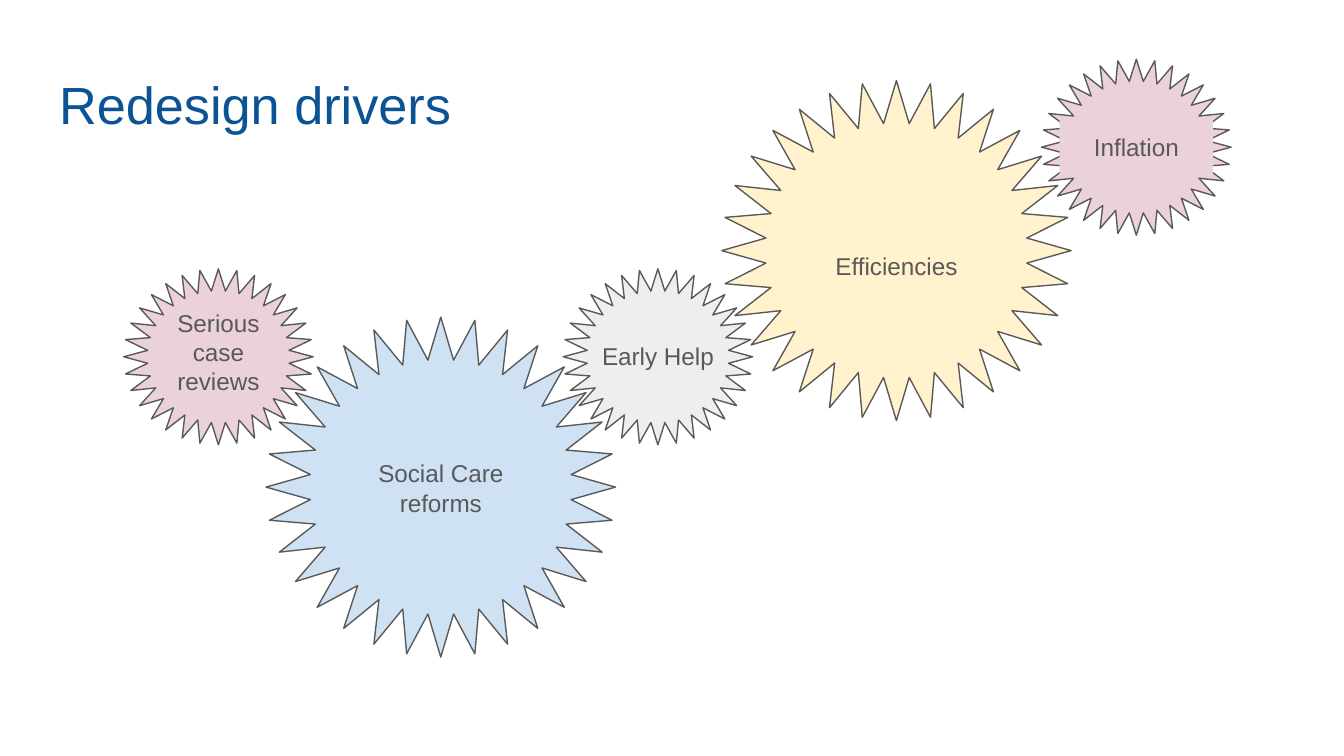
from dataclasses import dataclass

from pptx import Presentation
from pptx.dml.color import RGBColor
from pptx.enum import shapes, text
from pptx.util import Inches, Pt


@dataclass(frozen=True)
class Theme:
    font: str = "Arial"
    title_size: int = 28
    label_size: int = 13
    title: str = "0B5394"
    ink: str = "595959"
    blue: str = "CFE2F3"
    pink: str = "EAD1DC"
    cream: str = "FFF2CC"
    grey: str = "EEEEEE"


THEME = Theme()
LARGE, SMALL = (2.6, 2.53), (1.41, 1.31)
LABEL_WIDTH = 1.14

# wording, gear left, gear top, gear size, fill, label top, label height, label filled
CENTRAL_DRIVER = ("Social Care reforms", 1.98, 2.36, LARGE, THEME.blue, 3.31, 0.64, False)
LINKED_DRIVERS = [
    ("Inflation", 7.75, 0.44, SMALL, THEME.pink, 0.88, 0.42, True),
    ("Efficiencies", 5.37, 0.6, LARGE, THEME.cream, 1.55, 0.64, True),
    ("Serious case reviews", 0.92, 2, SMALL, THEME.pink, 2.19, 0.86, False),
    ("Early Help", 4.19, 2, SMALL, THEME.grey, 2.44, 0.42, False),
]


def paint(shape, color):
    shape.fill.solid()
    shape.fill.fore_color.rgb = RGBColor.from_string(color)


def write(frame, wording, size, color, align, anchor):
    frame.word_wrap = True
    frame.vertical_anchor = anchor
    frame.margin_left = frame.margin_right = Inches(0.1)
    frame.margin_top = frame.margin_bottom = Inches(0.1)
    paragraph = frame.paragraphs[0]
    paragraph.alignment = align
    run = paragraph.add_run()
    run.text = wording
    run.font.name = THEME.font
    run.font.size = Pt(size)
    run.font.color.rgb = RGBColor.from_string(color)
    return paragraph


def add_title(slide, wording):
    title = slide.shapes.title
    title.left, title.top = Inches(0.34), Inches(0.49)
    title.width, title.height = Inches(9.32), Inches(0.63)
    paragraph = write(title.text_frame, wording, THEME.title_size, THEME.title,
                      text.PP_ALIGN.LEFT, text.MSO_ANCHOR.TOP)
    paragraph.line_spacing = 0.9
    title.text_frame.auto_size = text.MSO_AUTO_SIZE.NONE


def add_driver(parts, wording, left, top, size, fill, label_top, label_height, filled):
    """Add a gear and its centred label to the shapes of a slide or group."""
    width, height = size
    gear = parts.add_shape(shapes.MSO_SHAPE.STAR_32_POINT, Inches(left),
                           Inches(top), Inches(width), Inches(height))
    paint(gear, fill)
    gear.line.color.rgb = RGBColor.from_string(THEME.ink)
    gear.line.width = Pt(0.75)
    gear.shadow.inherit = False

    label_left = left + (width - LABEL_WIDTH) / 2
    label = parts.add_textbox(Inches(label_left), Inches(label_top),
                              Inches(LABEL_WIDTH), Inches(label_height))
    anchor = text.MSO_ANCHOR.MIDDLE
    if filled:
        paint(label, fill)
        anchor = text.MSO_ANCHOR.BOTTOM
    write(label.text_frame, wording, THEME.label_size, THEME.ink,
          text.PP_ALIGN.CENTER, anchor)


def main():
    deck = Presentation()
    deck.slide_width = Inches(10)
    deck.slide_height = deck.slide_width * 9 // 16
    slide = deck.slides.add_slide(deck.slide_layouts[5])
    add_driver(slide.shapes, *CENTRAL_DRIVER)
    for driver in LINKED_DRIVERS:
        add_driver(slide.shapes.add_group_shape().shapes, *driver)
    add_title(slide, "Redesign drivers")
    deck.save("out.pptx")


if __name__ == "__main__":
    main()
